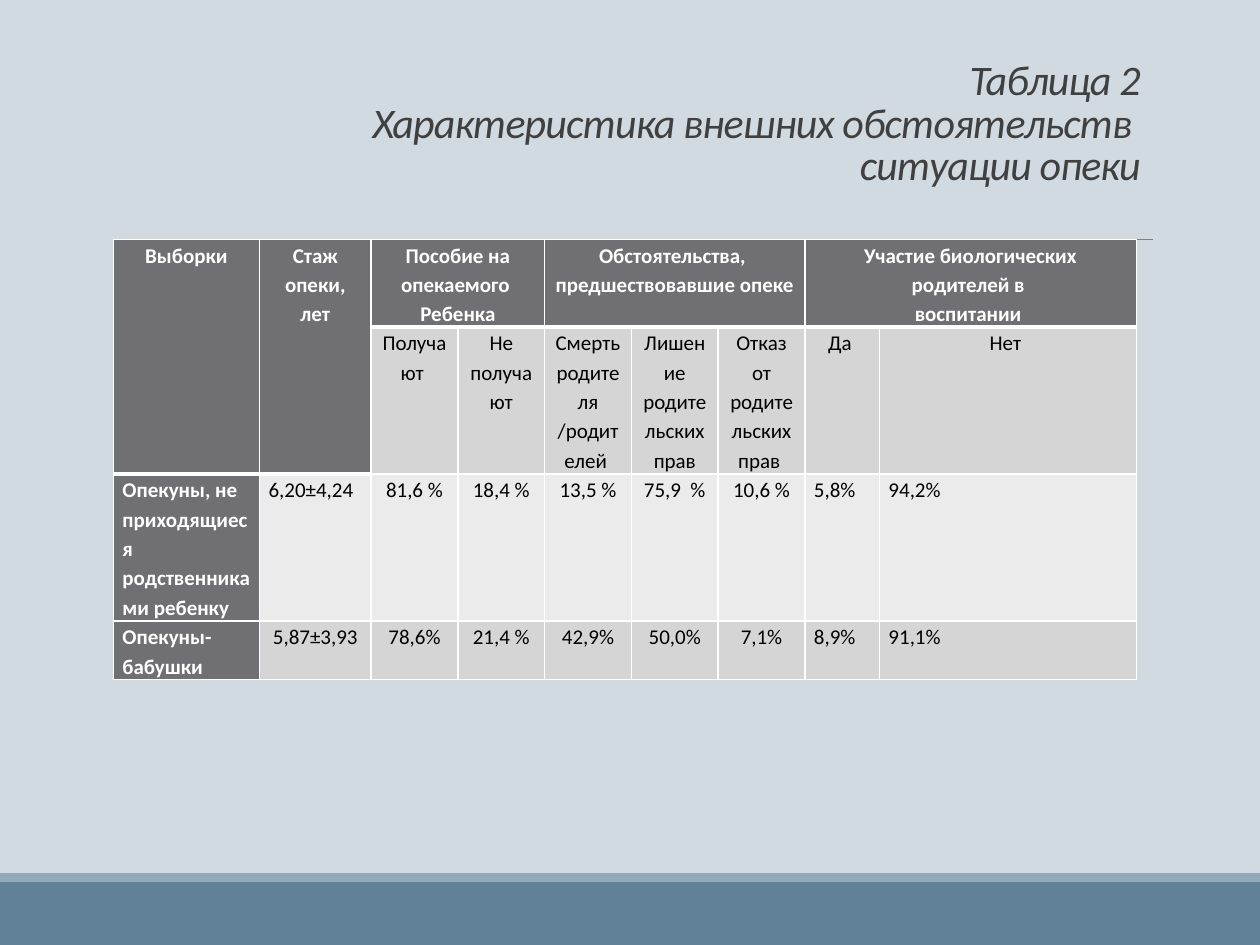
"""Build a slide with a table of the external circumstances of guardianship."""
from lxml import etree
from pptx import Presentation
from pptx.dml.color import RGBColor
from pptx.enum.shapes import MSO_CONNECTOR, MSO_SHAPE
from pptx.enum.text import MSO_ANCHOR, PP_ALIGN
from pptx.oxml.ns import qn
from pptx.util import Pt

RECT, LINE = MSO_SHAPE.RECTANGLE, MSO_CONNECTOR.STRAIGHT
LEFT, CENTER, RIGHT = PP_ALIGN.LEFT, PP_ALIGN.CENTER, PP_ALIGN.RIGHT
BOTTOM = MSO_ANCHOR.BOTTOM
FONT = "Calibri"
COLORS = {
    "background": "D1D9E1", "footer": "618197", "stripe": "92A9B9",
    "rule": "808080", "title": "404040", "head": "6F6F74",
    "dark": "D5D5D6", "light": "EBEBEB", "white": "FFFFFF", "black": "000000",
}
TITLE = "Таблица 2\vХарактеристика внешних обстоятельств \vситуации опеки"
COLUMN_WIDTHS = [83.5, 63.8] + [49.6] * 5 + [42.6, 146.8]
ROW_HEIGHTS = [50, 84, 84, 33.5]
HEADERS = [
    (0, 2, 1, "Выборки"),
    (1, 2, 1, "Стаж\nопеки, лет"),
    (2, 1, 2, "Пособие на опекаемого \nРебенка"),
    (4, 1, 3, "Обстоятельства, \nпредшествовавшие опеке"),
    (7, 1, 2, "Участие биологических родителей в \nвоспитании "),
]
SUBHEADERS = [
    "Получают ", "Не получают", "Смерть родителя /родителей ",
    "Лишение родительских прав", "Отказ от родительских прав ", "Да ", "Нет ",
]
SAMPLES = [
    ("Опекуны, не приходящиеся родственниками ребенку", "6,20±4,24", "81,6 %",
     "18,4 %", "13,5 %", "75,9  %", "10,6 %", "5,8%", "94,2%"),
    ("Опекуны-бабушки", "5,87±3,93", "78,6%",
     "21,4 %", "42,9%", "50,0%", "7,1%", "8,9%", "91,1%"),
]
SAMPLE_STYLES = [("light", {0, 1, 7, 8}), ("dark", {0, 7, 8})]


def rgb(name):
    return RGBColor.from_string(COLORS[name])


def add_band(s, top, height, color):
    sp = s.shapes.add_shape(RECT, 0, Pt(top), Pt(720), Pt(height))
    sp.shadow.inherit = False
    sp.fill.solid()
    sp.fill.fore_color.rgb = rgb(color)
    sp.line.fill.background()


def add_rule(s, x1, x2, y):
    cn = s.shapes.add_connector(LINE, Pt(x1), Pt(y), Pt(x2), Pt(y))
    cn.line.color.rgb = rgb("rule")
    cn.line.width = Pt(0.5)
    etree.SubElement(cn._element.spPr, qn("a:effectLst"))


def format_paragraph(p, size, color, align, spacing):
    p.alignment = align
    p.line_spacing = spacing
    p.font.name = FONT
    p.font.size = Pt(size)
    p.font.color.rgb = rgb(color)


def add_title(s):
    tf = s.shapes.add_textbox(Pt(64.8), Pt(22.3), Pt(594), Pt(114.5)).text_frame
    tf.word_wrap = True
    tf.vertical_anchor = BOTTOM
    tf.margin_bottom = Pt(28.5)
    tf.text = TITLE
    p = tf.paragraphs[0]
    format_paragraph(p, 24, "title", RIGHT, 0.85)
    p.font.italic = True
    for r in p.runs:
        r._r.get_or_add_rPr().set("spc", "-50")


def set_borders(cell, bottom):
    tcPr = cell._tc.get_or_add_tcPr()
    for side, width in (("L", 1), ("R", 1), ("T", 1), ("B", bottom)):
        ln = etree.SubElement(tcPr, qn(f"a:ln{side}"), w=str(Pt(width)))
        fill = etree.SubElement(ln, qn("a:solidFill"))
        etree.SubElement(fill, qn("a:srgbClr"), val=COLORS["white"])


def fill_cell(cell, text, fill, align=CENTER, bottom=1):
    set_borders(cell, bottom)
    cell.fill.solid()
    cell.fill.fore_color.rgb = rgb(fill)
    cell.margin_left = cell.margin_right = Pt(5.2)
    cell.margin_top = cell.margin_bottom = 0
    cell.text_frame.text = text
    is_head = fill == "head"
    for p in cell.text_frame.paragraphs:
        format_paragraph(p, 12, "white" if is_head else "black", align, 1.15)
        p.font.bold = is_head


def add_guardianship_table(s):
    frame = s.shapes.add_table(len(ROW_HEIGHTS), len(COLUMN_WIDTHS), Pt(64.8), Pt(136.8),
                               Pt(sum(COLUMN_WIDTHS)), Pt(sum(ROW_HEIGHTS)))
    table = frame.table
    table.first_row = table.horz_banding = False
    for column, width in zip(table.columns, COLUMN_WIDTHS):
        column.width = Pt(width)
    for row, height in zip(table.rows, ROW_HEIGHTS):
        row.height = Pt(height)
    for col, rows, cols, text in HEADERS:
        cell = table.cell(0, col)
        if rows * cols > 1:
            cell.merge(table.cell(rows - 1, col + cols - 1))
        fill_cell(cell, text, "head", bottom=3)
    for col, text in enumerate(SUBHEADERS, 2):
        fill_cell(table.cell(1, col), text, "dark")
    for row, (values, (shade, left_columns)) in enumerate(zip(SAMPLES, SAMPLE_STYLES), 2):
        for col, text in enumerate(values):
            fill_cell(table.cell(row, col), text, shade if col else "head",
                      LEFT if col in left_columns else CENTER)


def main():
    prs = Presentation()
    prs.slide_width, prs.slide_height = Pt(720), Pt(540)
    s = prs.slides.add_slide(prs.slide_layouts[6])
    s.background.fill.solid()
    s.background.fill.fore_color.rgb = rgb("background")
    add_band(s, 504, 36, "footer")
    add_band(s, 499, 5, "stripe")
    add_rule(s, 70.6, 658.8, 136.8)
    add_title(s)
    add_guardianship_table(s)
    prs.save("out.pptx")


if __name__ == "__main__":
    main()
